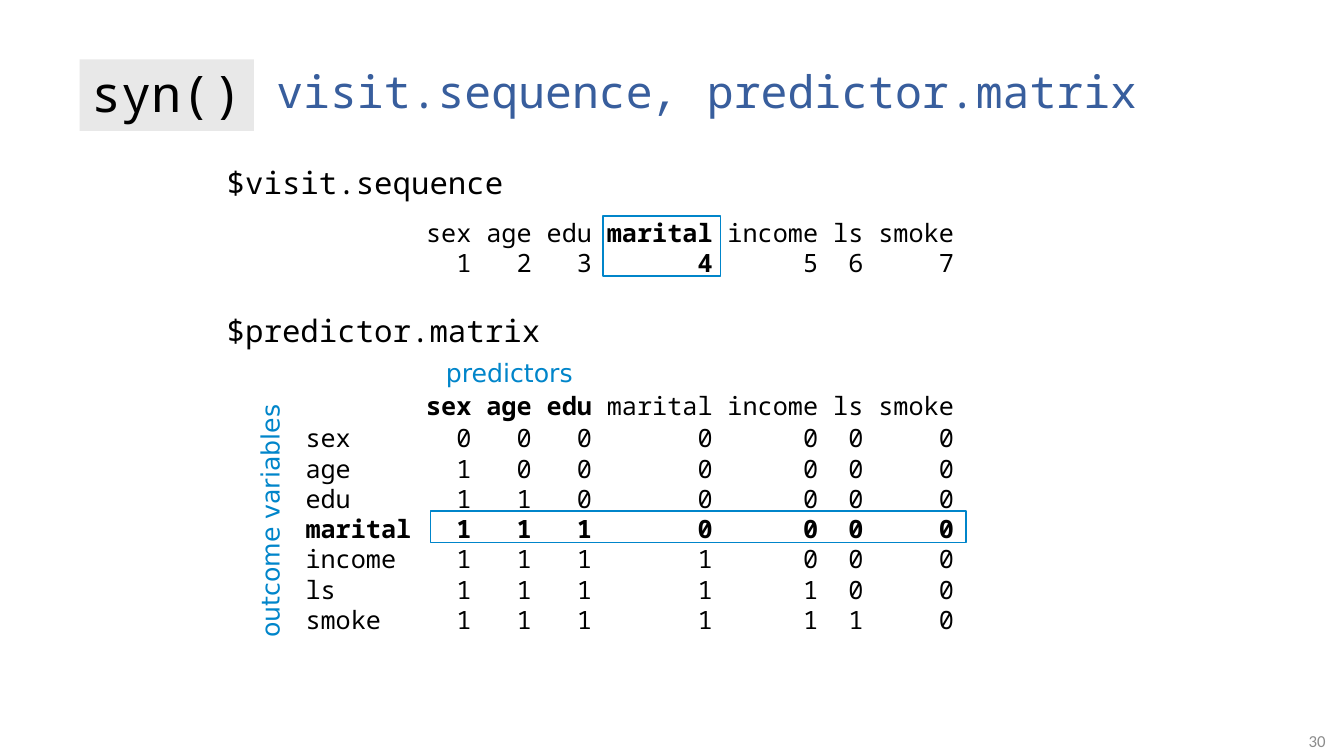
from dataclasses import dataclass
from itertools import groupby

from lxml.etree import SubElement
from pptx import Presentation
from pptx.dml.color import RGBColor
from pptx.enum.shapes import MSO_SHAPE
from pptx.enum.text import MSO_ANCHOR, MSO_AUTO_SIZE, PP_ALIGN
from pptx.oxml.ns import qn
from pptx.shapes.autoshape import Shape
from pptx.slide import Slide
from pptx.text.text import Font, TextFrame
from pptx.util import Cm, Pt


@dataclass(frozen=True)
class Theme:
    mono: str = "Noto Sans Mono"
    sans: str = "DejaVu Sans"
    plain: str = "Calibri"
    comma: str = "Courier New"
    black: str = "000000"
    blue: str = "0085CA"
    navy: str = "385E9D"
    pale: str = "E8E8E8"
    gray: str = "8C8C8C"
    badge: int = 36
    title: int = 32
    head: int = 22
    text: int = 18
    small: int = 12


@dataclass(frozen=True)
class Box:
    left: float
    top: float
    width: float
    height: float

    def place(self, shape: Shape) -> None:
        shape.left, shape.top = Cm(self.left), Cm(self.top)
        shape.width, shape.height = Cm(self.width), Cm(self.height)


@dataclass(frozen=True)
class Label:
    text: str
    box: Box
    face: str
    size: int
    color: str
    align: PP_ALIGN = PP_ALIGN.LEFT
    anchor: MSO_ANCHOR = MSO_ANCHOR.TOP
    turn: int = 0


@dataclass(frozen=True)
class Line:
    cells: list[str]
    bold: set[int]
    after: float = 0


LOOK = Theme()
NAMES = ["sex", "age", "edu", "marital", "income", "ls", "smoke"]
COUNT = len(NAMES)
FOCUS = NAMES.index("marital")

# Tab stops: row names to the left, then columns aligned right
START, CHAR = 1.99, 0.38
ENDS = [11, 15, 19, 27, 34, 37, 43]
STOPS = [(START, "l")] + [(START + CHAR * end, "r") for end in ENDS]

LABELS = [
    Label("outcome variables", Box(3.53, 12.55, 6.53, 1.02), LOOK.sans,
          LOOK.text, LOOK.blue, turn=270),
    Label("predictors", Box(10.97, 8.89, 3.73, 1.02), LOOK.sans,
          LOOK.text, LOOK.blue, PP_ALIGN.CENTER),
    Label("30", Box(26.04, 18.16, 7.62, 1.02), LOOK.plain,
          LOOK.small, LOOK.gray, PP_ALIGN.RIGHT, MSO_ANCHOR.MIDDLE),
]
FRAMES = [Box(10.85, 12.88, 13.49, 0.79), Box(15.19, 5.44, 2.97, 1.52)]


def style(font: Font, face: str, size: int, color: str) -> None:
    font.name, font.size = face, Pt(size)
    font.color.rgb = RGBColor.from_string(color)


def add_line(frame: TextFrame, line: Line) -> None:
    """Add one line with its cells spread over the tab stops."""
    first = not frame.paragraphs[0].runs
    para = frame.paragraphs[0] if first else frame.add_paragraph()
    para.space_after = Pt(line.after)
    style(para.font, LOOK.mono, LOOK.text, LOOK.black)
    for heavy, group in groupby(enumerate(line.cells),
                                lambda cell: cell[0] in line.bold):
        run = para.add_run()
        run.text = "".join("\t" + cell for _, cell in group)
        run.font.bold = heavy
    base = para.font._element
    tabs = SubElement(base.getparent(), qn("a:tabLst"))
    for pos, side in STOPS:
        SubElement(tabs, qn("a:tab"), pos=str(Cm(pos)), algn=side)
    base.addprevious(tabs)


def add_grid(slide: Slide, box: Box, lines: list[Line]) -> None:
    shape = slide.shapes.add_textbox(0, 0, 0, 0)
    box.place(shape)
    shape.text_frame.word_wrap = True
    for line in lines:
        add_line(shape.text_frame, line)


def add_label(slide: Slide, label: Label) -> None:
    shape = slide.shapes.add_textbox(0, 0, 0, 0)
    label.box.place(shape)
    shape.rotation = label.turn
    frame = shape.text_frame
    frame.word_wrap, frame.vertical_anchor = True, label.anchor
    para = frame.paragraphs[0]
    para.text, para.alignment = label.text, label.align
    style(para.font, label.face, label.size, label.color)


def add_rect(slide: Slide, box: Box) -> Shape:
    shape = slide.shapes.add_shape(MSO_SHAPE.RECTANGLE, 0, 0, 0, 0)
    box.place(shape)
    shape.shadow.inherit = False
    return shape


def add_title(slide: Slide) -> None:
    shape = slide.shapes.title
    Box(6.71, 1.4, 23.01, 2.01).place(shape)
    frame = shape.text_frame
    frame.auto_size = MSO_AUTO_SIZE.NONE
    frame.vertical_anchor = MSO_ANCHOR.MIDDLE
    para = frame.paragraphs[0]
    para.alignment, para.line_spacing = PP_ALIGN.LEFT, 0.8
    for text, face in [("visit.sequence", LOOK.mono), (", ", LOOK.comma),
                       ("predictor.matrix", LOOK.mono)]:
        run = para.add_run()
        run.text = text
        style(run.font, face, LOOK.title, LOOK.navy)


def add_heads(slide: Slide) -> None:
    shape = slide.placeholders[1]
    Box(5.46, 3.99, 23.72, 12.19).place(shape)
    frame = shape.text_frame
    frame.auto_size = MSO_AUTO_SIZE.NONE
    frame.vertical_anchor = MSO_ANCHOR.TOP
    frame.text = "$visit.sequence\n$predictor.matrix"
    for para, gap in zip(frame.paragraphs, (0, 79.2)):
        para.space_before = Pt(gap)
        style(para.font, LOOK.mono, LOOK.head, LOOK.black)
        base = para.font._element
        props = base.getparent()
        props.set("marL", "0")
        props.set("indent", "0")
        base.addprevious(SubElement(props, qn("a:buNone")))


def add_grids(slide: Slide) -> None:
    # Visit sequence
    order = [str(i + 1) for i in range(COUNT)]
    add_grid(slide, Box(5.46, 5.34, 23.72, 1.78),
             [Line(["", *cells], {FOCUS + 1}) for cells in (NAMES, order)])

    # Predictor matrix: each variable is predicted by those before it
    lines = [Line(["", *NAMES], set(range(FOCUS + 1)), after=1.5)]
    for row, name in enumerate(NAMES):
        marks = [str(int(col < row)) for col in range(COUNT)]
        bold = set(range(COUNT + 1)) if row == FOCUS else set()
        lines.append(Line([name, *marks], bold))
    add_grid(slide, Box(5.46, 9.71, 23.72, 6.47), lines)


def add_badge(slide: Slide) -> None:
    shape = add_rect(slide, Box(2.01, 1.5, 4.39, 1.8))
    shape.fill.solid()
    shape.fill.fore_color.rgb = RGBColor.from_string(LOOK.pale)
    shape.line.fill.background()
    frame = shape.text_frame
    frame.margin_top, frame.margin_bottom = Cm(0), Cm(0.13)
    frame.word_wrap = False
    para = frame.paragraphs[0]
    para.text, para.alignment = "syn()", PP_ALIGN.CENTER
    style(para.font, LOOK.mono, LOOK.badge, LOOK.black)


def main() -> None:
    deck = Presentation()
    deck.slide_width, deck.slide_height = Cm(33.87), Cm(19.05)
    slide = deck.slides.add_slide(deck.slide_layouts[1])
    add_title(slide)
    add_heads(slide)
    add_grids(slide)
    for label in LABELS:
        add_label(slide, label)
    for box in FRAMES:  # highlights
        shape = add_rect(slide, box)
        shape.fill.background()
        shape.line.color.rgb = RGBColor.from_string(LOOK.blue)
        shape.line.width = Pt(1.25)
    add_badge(slide)
    deck.save("out.pptx")


if __name__ == "__main__":
    main()
